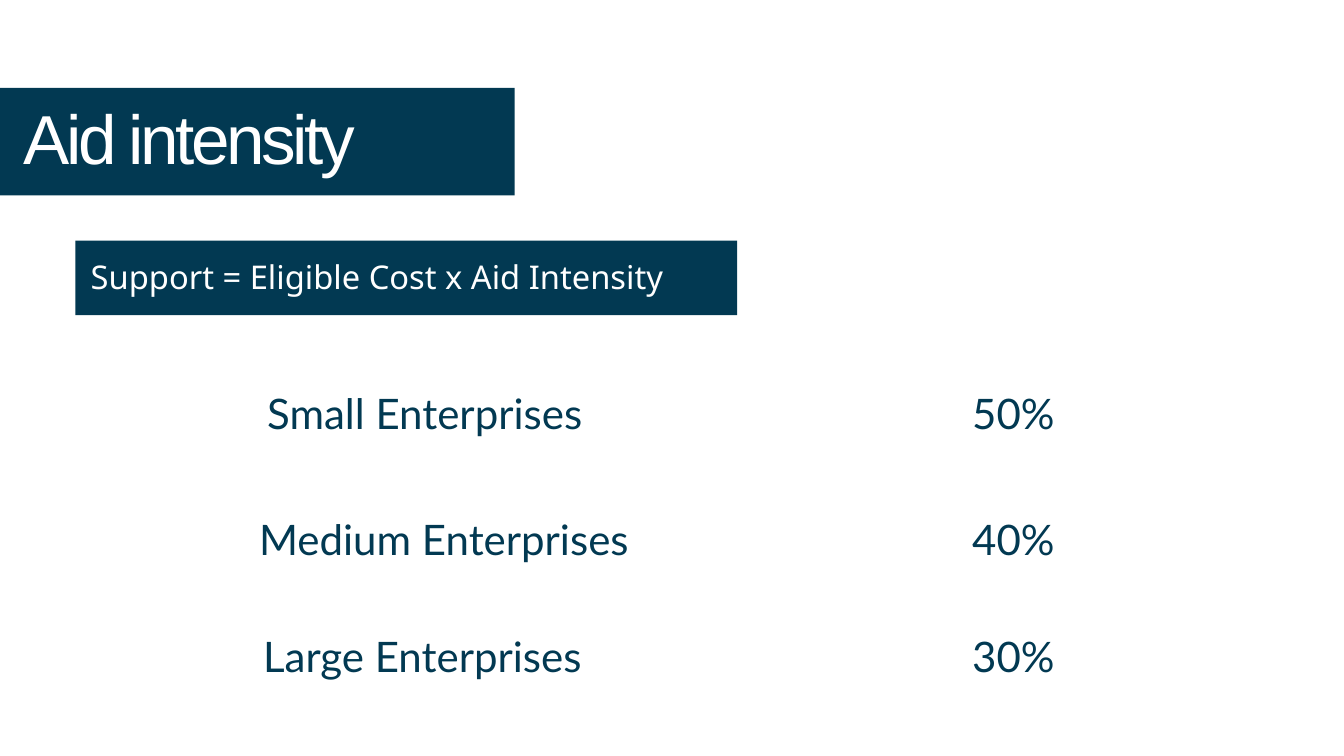
"""Build the aid intensity slide."""
from pptx import Presentation
from pptx.dml.color import RGBColor
from pptx.enum.shapes import MSO_SHAPE
from pptx.enum.text import PP_ALIGN
from pptx.util import Inches, Pt

NAVY = RGBColor(0x02, 0x39, 0x52)
WHITE = RGBColor(0xFF, 0xFF, 0xFF)

BANDS = [(-0.51, 1.31, 8.17, 1.6), (1.12, 3.58, 9.85, 1.11)]
TITLE = "Aid intensity"
FORMULA = "Support = Eligible Cost x Aid Intensity"
RATES = [
    ("Small Enterprises ", "50%", 5.64, 3.04, 6.72),
    ("Medium Enterprises ", "40%", 7.51, 2.98, 7.41),
    ("Large Enterprises ", "30%", 9.26, 2.98, 6.77),
]
RATE_LEFT, RATE_WIDTH, ROW_HEIGHT = 11.91, 6.34, 0.86


def add_band(s, box):
    sp = s.shapes.add_shape(MSO_SHAPE.RECTANGLE, *map(Inches, box))
    sp.shadow.inherit = False
    sp.fill.solid()
    sp.fill.fore_color.rgb = NAVY
    sp.line.fill.background()


def add_text(s, text, box, font, size, leading, color, align=PP_ALIGN.LEFT, spacing=0):
    tf = s.shapes.add_textbox(*map(Inches, box)).text_frame
    tf.word_wrap = True
    tf.margin_left = tf.margin_top = tf.margin_right = tf.margin_bottom = 0
    p = tf.paragraphs[0]
    p.alignment = align
    p.line_spacing = Pt(leading)
    p.font.name = font
    p.font.size = Pt(size)
    p.font.color.rgb = color
    r = p.add_run()
    r.text = text
    if spacing:
        r._r.get_or_add_rPr().set("spc", str(round(spacing * 100)))


def main():
    prs = Presentation()
    prs.slide_width, prs.slide_height = Inches(20), Inches(11.25)
    s = prs.slides.add_slide(prs.slide_layouts[6])
    for box in BANDS:
        add_band(s, box)
    add_text(s, TITLE, (0.35, 1.67, 7.06, 0.98), "Arial", 74.2, 70.5, WHITE, spacing=-3.7)
    add_text(s, FORMULA, (1.35, 3.73, 9.24, 1.34), "Noto Sans", 35, 49, WHITE)
    for label, rate, top, left, width in RATES:
        for text, x, w in ((label, left, width), (rate, RATE_LEFT, RATE_WIDTH)):
            add_text(s, text, (x, top, w, ROW_HEIGHT), "Lato", 45, 63, NAVY, PP_ALIGN.CENTER)
    prs.save("out.pptx")


if __name__ == "__main__":
    main()
